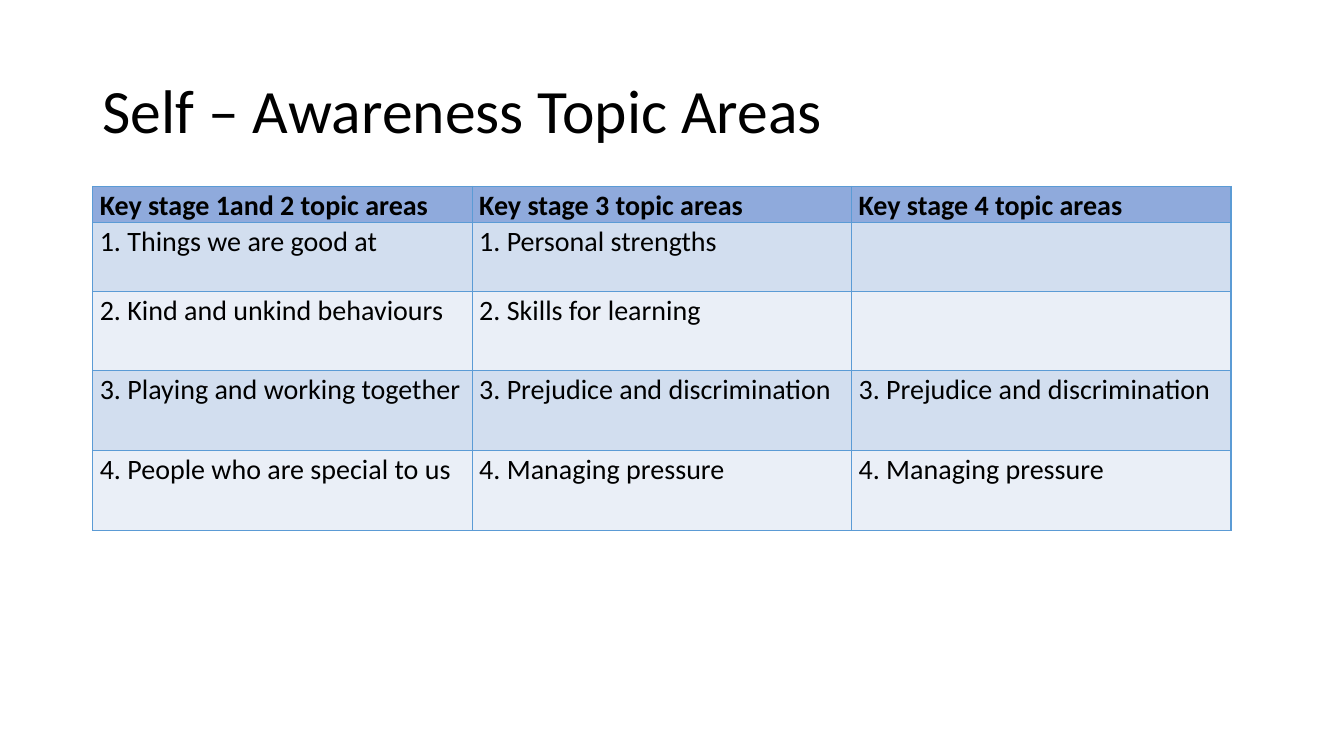
from lxml.etree import SubElement
from pptx import Presentation
from pptx.dml.color import RGBColor
from pptx.enum.text import MSO_ANCHOR
from pptx.oxml.ns import qn
from pptx.util import Inches, Pt

BLACK = RGBColor(0x00, 0x00, 0x00)
HEADER_BLUE = RGBColor(0x8F, 0xAA, 0xDC)
BAND_DARK = RGBColor(0xD2, 0xDE, 0xEF)
BAND_LIGHT = RGBColor(0xEA, 0xEF, 0xF7)
BORDER_BLUE = RGBColor(0x5B, 0x9B, 0xD5)
FONT = "Calibri"

TOPICS = [
    ["Key stage 1and 2 topic areas", "Key stage 3 topic areas", "Key stage 4 topic areas"],
    ["1. Things we are good at", "1. Personal strengths", ""],
    ["2. Kind and unkind behaviours", "2. Skills for learning", ""],
    ["3. Playing and working together", "3. Prejudice and discrimination",
     "3. Prejudice and discrimination"],
    ["4. People who are special to us", "4. Managing pressure", "4. Managing pressure"],
]
ROW_HEIGHTS = [0.36, 0.68, 0.79, 0.79, 0.79]


def write_text(frame, text, size, bold=False, spacing=1.0):
    para = frame.paragraphs[0]
    para.line_spacing = spacing
    para.font.size = Pt(size)
    if text:
        span = para.add_run()
        span.text = text
        span.font.name = FONT
        span.font.size = Pt(size)
        span.font.bold = bold
        span.font.color.rgb = BLACK


def add_title(page, left, top, width, height):
    box = page.shapes.add_textbox(Inches(left), Inches(top), Inches(width), Inches(height))
    frame = box.text_frame
    frame.word_wrap = True
    frame.vertical_anchor = MSO_ANCHOR.MIDDLE
    write_text(frame, "Self – Awareness Topic Areas", size=44, spacing=0.9)


def add_borders(cell):
    properties = cell._tc.get_or_add_tcPr()
    for side in ("lnL", "lnR", "lnT", "lnB"):
        line = SubElement(properties, qn(f"a:{side}"), w=str(Pt(1)))
        fill = SubElement(line, qn("a:solidFill"))
        SubElement(fill, qn("a:srgbClr"), val=str(BORDER_BLUE))


def format_cell(cell, text, row_index):
    is_header = row_index == 0
    cell.margin_left = cell.margin_right = Inches(0.07)
    cell.margin_top = cell.margin_bottom = 0
    write_text(cell.text_frame, text, size=20, bold=is_header, spacing=1.07)
    add_borders(cell)
    cell.fill.solid()
    band = BAND_DARK if row_index % 2 else BAND_LIGHT
    cell.fill.fore_color.rgb = HEADER_BLUE if is_header else band


def add_topic_table(page, left, top, width):
    column_count = len(TOPICS[0])
    table = page.shapes.add_table(
        len(TOPICS), column_count, Inches(left), Inches(top),
        Inches(width), Inches(sum(ROW_HEIGHTS))).table
    for column in table.columns:
        column.width = Inches(width / column_count)
    for row_index, (row, height) in enumerate(zip(table.rows, ROW_HEIGHTS)):
        row.height = Inches(height)
        for cell, text in zip(row.cells, TOPICS[row_index]):
            format_cell(cell, text, row_index)


def main():
    deck = Presentation()
    deck.slide_width = Inches(13.33)
    deck.slide_height = Inches(7.5)
    page = deck.slides.add_slide(deck.slide_layouts[6])
    add_title(page, left=0.92, top=0.4, width=11.5, height=1.45)
    add_topic_table(page, left=0.92, top=1.85, width=11.29)
    deck.save("out.pptx")


if __name__ == "__main__":
    main()
